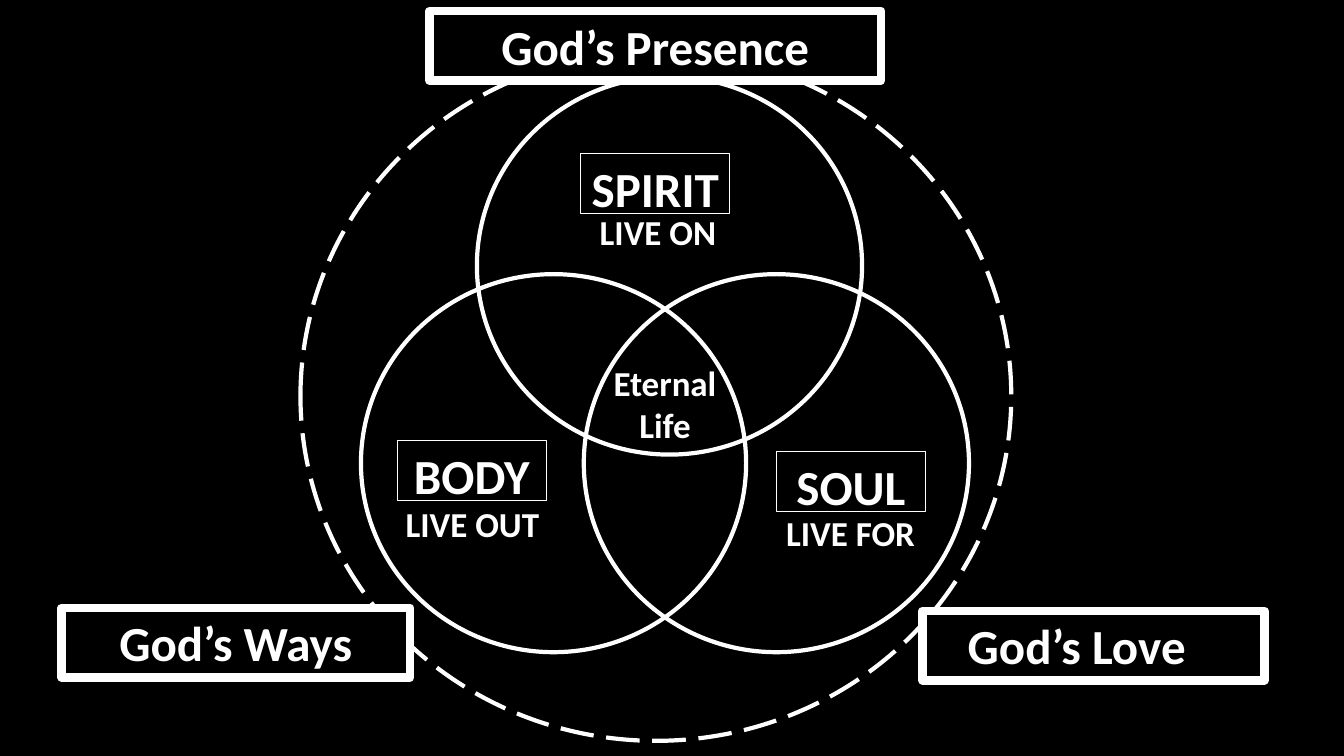
from dataclasses import dataclass

from pptx import Presentation
from pptx.dml.color import RGBColor
from pptx.enum.dml import MSO_LINE
from pptx.enum.shapes import MSO_SHAPE
from pptx.enum.text import MSO_ANCHOR, MSO_AUTO_SIZE, PP_ALIGN
from pptx.util import Inches, Pt


@dataclass(frozen=True)
class Theme:
    """Colours, font and sizes used on the slide."""

    background: RGBColor = RGBColor(0x00, 0x00, 0x00)
    ink: RGBColor = RGBColor(0xFF, 0xFF, 0xFF)
    font: str = "Calibri"
    heading: Pt = Pt(35)
    caption: Pt = Pt(25)
    thin: Pt = Pt(0.75)
    ring: Pt = Pt(3)
    frame: Pt = Pt(6)


THEME = Theme()


def place(sp, left, top, width, height):
    """Move and size a shape, in inches."""
    sp.left, sp.top = Inches(left), Inches(top)
    sp.width, sp.height = Inches(width), Inches(height)


def write(sp, lines, size, wrap=True):
    """Fill a shape with bold centred lines, starting at its top."""
    tf = sp.text_frame
    tf.text = "\n".join(lines)
    tf.word_wrap = wrap
    tf.auto_size = MSO_AUTO_SIZE.NONE
    tf.vertical_anchor = MSO_ANCHOR.TOP
    for p in tf.paragraphs:
        p.alignment = PP_ALIGN.CENTER
        p.font.name, p.font.size, p.font.bold = THEME.font, size, True
        p.font.color.rgb = THEME.ink


def outline(sp, width):
    """Give a shape a plain outline."""
    sp.line.color.rgb = THEME.ink
    sp.line.width = width


def add_outlined(s, kind, box, width):
    """Add an unfilled, outlined preset shape."""
    sp = s.shapes.add_shape(kind, *map(Inches, box))
    sp.shadow.inherit = False
    sp.fill.background()
    outline(sp, width)
    return sp


def add_circle(s, left, top, width=3.82, height=3.75):
    """Add one ring of the diagram."""
    return add_outlined(s, MSO_SHAPE.OVAL, (left, top, width, height), THEME.ring)


def add_label(s, text, left, top):
    """Add a thinly framed circle name."""
    sp = add_outlined(s, MSO_SHAPE.RECTANGLE, (left, top, 1.48, 0.6), THEME.thin)
    write(sp, [text], THEME.heading, wrap=False)


def add_caption(s, lines, left, top, width, height=0.52):
    """Add a text box of smaller type."""
    sp = s.shapes.add_textbox(*map(Inches, (left, top, width, height)))
    write(sp, lines, THEME.caption)


def style_banner(sp, text):
    """Make a shape a black banner with a heavy frame."""
    sp.fill.solid()
    sp.fill.fore_color.rgb = THEME.background
    outline(sp, THEME.frame)
    write(sp, [text], THEME.heading)


def add_banner(s, text, left, top, width):
    """Add a heavy-framed banner."""
    box = (left, top, width, 0.69)
    sp = add_outlined(s, MSO_SHAPE.RECTANGLE, box, THEME.frame)
    style_banner(sp, text)
    return sp


def main():
    """Build the slide and save it."""
    prs = Presentation()
    prs.slide_width, prs.slide_height = Inches(13.33), Inches(7.5)
    s = prs.slides.add_slide(prs.slide_layouts[5])
    s.background.fill.solid()
    s.background.fill.fore_color.rgb = THEME.background

    surround = add_circle(s, 2.98, 0.51, 7.05, 6.84)
    surround.line.dash_style = MSO_LINE.LONG_DASH
    for left, top in ((3.58, 2.72), (5.79, 2.72), (4.73, 0.76)):
        add_circle(s, left, top)

    add_label(s, "SOUL", 7.7, 4.48)
    add_label(s, "SPIRIT", 5.76, 1.52)
    add_label(s, "BODY", 3.94, 4.37)
    add_caption(s, ["LIVE FOR"], 6.74, 5.03, 3.39)
    add_caption(s, ["LIVE ON"], 5.42, 2.04, 2.21)
    add_caption(s, ["LIVE OUT"], 3.58, 4.94, 2.21)
    add_caption(s, ["Eternal", "Life"], 4.9, 3.54, 3.39, 0.94)

    add_banner(s, "God’s Ways", 0.61, 6.03, 3.46)
    love = add_banner(s, "God’s Love", 9.15, 6.06, 3.39)
    love.text_frame.margin_right = Inches(0.43)

    title = s.shapes.title
    place(title, 4.26, 0.11, 4.48, 0.69)
    style_banner(title, "God’s Presence")
    title.element.getparent().append(title.element)

    prs.save("out.pptx")


if __name__ == "__main__":
    main()
